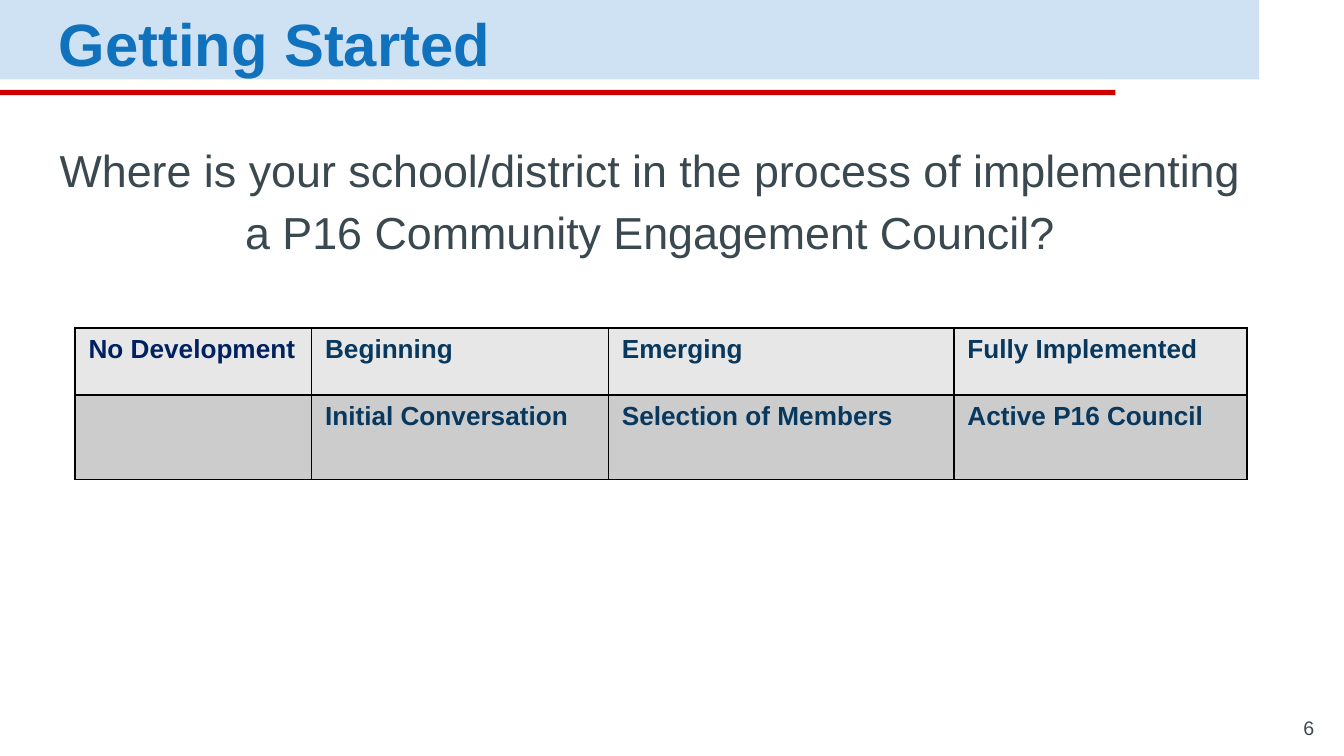
from lxml import etree
from pptx import Presentation
from pptx.dml.color import RGBColor
from pptx.enum.shapes import MSO_SHAPE
from pptx.enum.text import MSO_ANCHOR, MSO_AUTO_SIZE, PP_ALIGN
from pptx.oxml.ns import qn
from pptx.util import Cm, Pt

RECT = MSO_SHAPE.RECTANGLE
TOP, MIDDLE, BOTTOM = MSO_ANCHOR.TOP, MSO_ANCHOR.MIDDLE, MSO_ANCHOR.BOTTOM
LEFT, CENTER, RIGHT = PP_ALIGN.LEFT, PP_ALIGN.CENTER, PP_ALIGN.RIGHT
FIXED = MSO_AUTO_SIZE.NONE

PALE = RGBColor(0xCF, 0xE2, 0xF3)
RED = RGBColor(0xCC, 0x00, 0x00)
BLUE = RGBColor(0x10, 0x71, 0xBD)
SLATE = RGBColor(0x3A, 0x49, 0x50)
NAVY = RGBColor(0x00, 0x20, 0x60)
TEAL = RGBColor(0x08, 0x38, 0x5E)
LIGHT = RGBColor(0xE7, 0xE7, 0xE7)
GRAY = RGBColor(0xCC, 0xCC, 0xCC)

TITLE = "Getting Started"
ASK = ("Where is your school/district in the process of implementing "
       "a P16 Community Engagement Council?")
PAGE = "6"
STAGES = [
    ["No Development", "Beginning", "Emerging", "Fully Implemented"],
    ["", "Initial Conversation", "Selection of Members", "Active P16 Council"],
]
COLS = [4.47, 5.61, 6.53, 5.54]
ROWS = [1.27, 1.59]
FILLS = [LIGHT, GRAY]
BARS = [((0, 0, 23.8, 1.5), PALE), ((0, 1.7, 21.08, 0.1), RED)]

BLOCK = {"line_spacing": 1.15, "space_before": Pt(0), "space_after": Pt(16)}


def style(para, size, color, bold=False, **form):
    for key, value in form.items():
        setattr(para, key, value)
    font = para.font
    for key, value in {"name": "Arial", "size": Pt(size), "bold": bold}.items():
        setattr(font, key, value)
    font.color.rgb = color


def place(shape, box):
    for key, value in zip(("left", "top", "width", "height"), box):
        setattr(shape, key, Cm(value))


def write(shape, box, text, anchor, size, color, bold=False, **form):
    place(shape, box)
    frame = shape.text_frame
    frame.text = text
    look = {"word_wrap": True, "auto_size": FIXED, "vertical_anchor": anchor}
    for side in ("left", "top", "right", "bottom"):
        look["margin_" + side] = Cm(0.25)
    for key, value in look.items():
        setattr(frame, key, value)
    para = frame.paragraphs[0]
    props = para._p.get_or_add_pPr()
    props.set("marL", "0")
    props.set("indent", "0")
    etree.SubElement(props, qn("a:buNone"))
    style(para, size, color, bold, **form)


def edge(cell):
    props = cell._tc.get_or_add_tcPr()
    for side in ("lnL", "lnR", "lnT", "lnB"):
        line = etree.SubElement(props, qn("a:" + side), w=str(Pt(1)))
        fill = etree.SubElement(line, qn("a:solidFill"))
        etree.SubElement(fill, qn("a:srgbClr"), val="000000")


deck = Presentation()
deck.slide_width, deck.slide_height = Cm(25.4), Cm(14.29)
slide = deck.slides.add_slide(deck.slide_layouts[1])
shapes = slide.shapes

for spot, (box, color) in enumerate(BARS, 2):
    bar = shapes.add_shape(RECT, *map(Cm, box))
    bar.shadow.inherit = False
    bar.fill.solid()
    bar.fill.fore_color.rgb = color
    bar.line.fill.background()
    shapes._spTree.insert(spot, bar._element)

write(shapes.title, (0.86, 0.08, 22.94, 1.24), TITLE, MIDDLE, 32, BLUE, True,
      alignment=LEFT, **BLOCK)
write(slide.placeholders[1], (0.76, 2.29, 23.04, 10.21), ASK, TOP, 24, SLATE,
      alignment=CENTER, **BLOCK)
page = (23.57, 13.56, 1.52, 0.66)
write(shapes.add_textbox(*map(Cm, page)), page, PAGE, BOTTOM, 10.5, SLATE,
      alignment=RIGHT)

grid = shapes.add_table(len(ROWS), len(COLS), Cm(1.42), Cm(6.2),
                        Cm(sum(COLS)), Cm(sum(ROWS))).table
grid.first_row = grid.horz_banding = False
for col, width in zip(grid.columns, COLS):
    col.width = Cm(width)
for r, (row, high) in enumerate(zip(grid.rows, ROWS)):
    row.height = Cm(high)
    for c, text in enumerate(STAGES[r]):
        cell = grid.cell(r, c)
        cell.text = text
        edge(cell)
        cell.fill.solid()
        cell.fill.fore_color.rgb = FILLS[r]
        style(cell.text_frame.paragraphs[0], 14, TEAL if c else NAVY, True)

deck.save("out.pptx")
